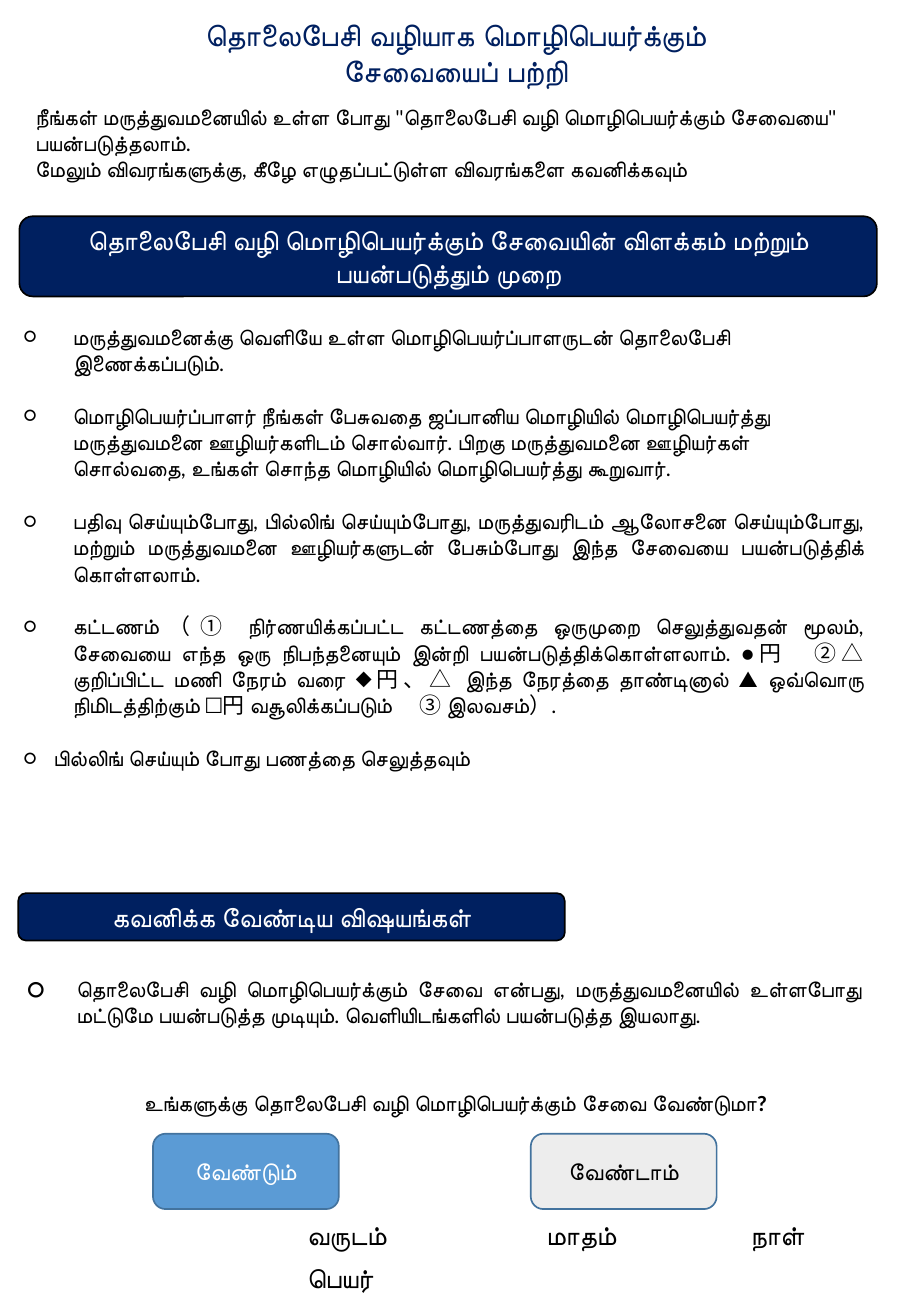
from lxml import etree
from pptx import Presentation
from pptx.dml.color import RGBColor
from pptx.enum import shapes, text
from pptx.oxml import ns
from pptx.util import Inches, Pt

# Content
TITLE = ["தொலைபேசி வழியாக மொழிபெயர்க்கும்", "சேவையைப் பற்றி"]
INTRO = [
    "நீங்கள் மருத்துவமனையில் உள்ள போது \"தொலைபேசி வழி மொழிபெயர்க்கும் சேவையை\" பயன்படுத்தலாம்.",
    "மேலும் விவரங்களுக்கு, கீழே எழுதப்பட்டுள்ள விவரங்களை கவனிக்கவும்",
]
# Banner: wording, left, top, width, height
BANNERS = [
    ("தொலைபேசி வழி மொழிபெயர்க்கும் சேவையின் விளக்கம் மற்றும் பயன்படுத்தும் முறை",
     0.16, 1.78, 7.06, 0.66),
    ("கவனிக்க வேண்டிய விஷயங்கள்", 0.15, 7.35, 4.5, 0.39),
]
# Service point: wording, justified, hanging indent
SERVICE_POINTS = [
    ("மருத்துவமனைக்கு வெளியே உள்ள மொழிபெயர்ப்பாளருடன் தொலைபேசி இணைக்கப்படும்.", False, 0.4),
    ("மொழிபெயர்ப்பாளர் நீங்கள் பேசுவதை ஜப்பானிய மொழியில் மொழிபெயர்த்து மருத்துவமனை "
     "ஊழியர்களிடம் சொல்வார். பிறகு மருத்துவமனை ஊழியர்கள் சொல்வதை, உங்கள் சொந்த மொழியில் "
     "மொழிபெயர்த்து கூறுவார்.", False, 0.4),
    ("பதிவு செய்யும்போது, பில்லிங் செய்யும்போது, மருத்துவரிடம் ஆலோசனை செய்யும்போது, மற்றும் "
     "மருத்துவமனை ஊழியர்களுடன் பேசும்போது இந்த சேவையை பயன்படுத்திக் கொள்ளலாம்.", True, 0.4),
    ("கட்டணம்（① நிர்ணயிக்கப்பட்ட கட்டணத்தை ஒருமுறை செலுத்துவதன் மூலம், சேவையை எந்த ஒரு "
     "நிபந்தனையும் இன்றி பயன்படுத்திக்கொள்ளலாம். ●円　②△ குறிப்பிட்ட மணி நேரம் வரை ◆円、△ "
     "இந்த நேரத்தை தாண்டினால் ▲ ஒவ்வொரு நிமிடத்திற்கும் □円 வசூலிக்கப்படும் 　③ இலவசம்）.",
     True, 0.4),
    ("பில்லிங் செய்யும் போது பணத்தை செலுத்தவும்", True, 0.24),
]
CAUTION = ("தொலைபேசி வழி மொழிபெயர்க்கும் சேவை என்பது, மருத்துவமனையில் உள்ளபோது மட்டுமே "
           "பயன்படுத்த முடியும். வெளியிடங்களில் பயன்படுத்த இயலாது.")
QUESTION = "உங்களுக்கு தொலைபேசி வழி மொழிபெயர்க்கும் சேவை வேண்டுமா?"
# Answer: wording, left, fill, font colour
ANSWERS = [("வேண்டும்", 1.26, "blue", "white"), ("வேண்டாம்", 4.37, "grey", "black")]
SIGNATURE = ["\tவருடம்\tமாதம்\tநாள்", "\tபெயர்"]
SIGNATURE_TABS = [2.27, 4.24, 5.92]

COLORS = {"navy": "002060", "black": "000000", "white": "FFFFFF",
          "blue": "5B9BD5", "grey": "EDEDED", "edge": "43739E"}
LEFT, CENTER, JUSTIFY = text.PP_ALIGN.LEFT, text.PP_ALIGN.CENTER, text.PP_ALIGN.JUSTIFY


def color(name):
    return RGBColor.from_string(COLORS[name])


def add_xml(parent, tag, **attributes):
    return etree.SubElement(parent, ns.qn(tag), attributes)


def add_paragraph(frame, words, size, ink="black", align=LEFT, bold=False, font="Calibri"):
    first = frame.paragraphs[0]
    paragraph = frame.add_paragraph() if first.runs else first
    paragraph.alignment = align
    run = paragraph.add_run()
    run.text = words
    run.font.name, run.font.size, run.font.bold = font, Pt(size), bold
    run.font.color.rgb = color(ink)
    return paragraph


def add_bullet(paragraph, indent, percent=100):
    properties = paragraph._p.get_or_add_pPr()
    properties.set("marL", str(Inches(indent)))
    properties.set("indent", str(-Inches(indent)))
    add_xml(properties, "a:buSzPct", val=str(percent * 1000))
    add_xml(properties, "a:buFont", typeface="Calibri")
    add_xml(properties, "a:buChar", char="○")


def add_text_area(left, top, width, height):
    frame = slide.shapes.add_textbox(*map(Inches, (left, top, width, height))).text_frame
    frame.word_wrap = True
    return frame


def add_panel(words, box, fill, edge, size, ink):
    panel = slide.shapes.add_shape(shapes.MSO_SHAPE.ROUNDED_RECTANGLE, *map(Inches, box))
    panel.shadow.inherit = False
    panel.fill.solid()
    panel.fill.fore_color.rgb = color(fill)
    panel.line.color.rgb = color(edge)
    panel.line.width = Pt(1)
    panel.text_frame.word_wrap = True
    panel.text_frame.vertical_anchor = text.MSO_ANCHOR.MIDDLE
    add_paragraph(panel.text_frame, words, size, ink, CENTER)


deck = Presentation()
deck.slide_width, deck.slide_height = Inches(7.5), Inches(10.83)
slide = deck.slides.add_slide(deck.slide_layouts[5])

# Title
title = slide.shapes.title
title.left, title.top, title.width, title.height = map(Inches, (0, 0.08, 7.5, 0.71))
title.text_frame.auto_size = text.MSO_AUTO_SIZE.NONE
title.text_frame.vertical_anchor = text.MSO_ANCHOR.TOP
for line in TITLE:
    add_paragraph(title.text_frame, line, 18, "navy", CENTER, True, "Arial")

# Introduction
intro = add_text_area(0.19, 0.8, 7.04, 0.8)
for line, align in zip(INTRO, (LEFT, JUSTIFY)):
    add_paragraph(intro, line, 13, align=align)

# Section banners
for words, *box in BANNERS:
    add_panel(words, box, "navy", "black", 16, "white")

# How the service works
service = add_text_area(0.1, 2.61, 7.11, 4.56)
for number, (words, justified, indent) in enumerate(SERVICE_POINTS):
    point = add_paragraph(service, words, 13, align=JUSTIFY if justified else LEFT)
    add_bullet(point, indent)
    if number:
        point.space_before = Pt(15.6)

# Point to note
caution = add_paragraph(add_text_area(0.13, 7.98, 7.06, 0.7), CAUTION, 13, align=JUSTIFY)
add_bullet(caution, 0.4, 138)

# Question and answers
add_paragraph(add_text_area(0, 8.92, 7.5, 0.32), QUESTION, 13, align=CENTER, bold=True)
for words, left, fill, ink in ANSWERS:
    add_panel(words, (left, 9.33, 1.53, 0.62), fill, "edge", 14, ink)

# Date and name
signature = add_text_area(0.16, 9.98, 7.17, 0.72)
for line in SIGNATURE:
    entry = add_paragraph(signature, line, 16)
    stops = add_xml(entry._p.get_or_add_pPr(), "a:tabLst")
    for position in SIGNATURE_TABS:
        add_xml(stops, "a:tab", pos=str(Inches(position)), algn="l")
signature.paragraphs[0].space_after = Pt(6)

deck.save("out.pptx")
